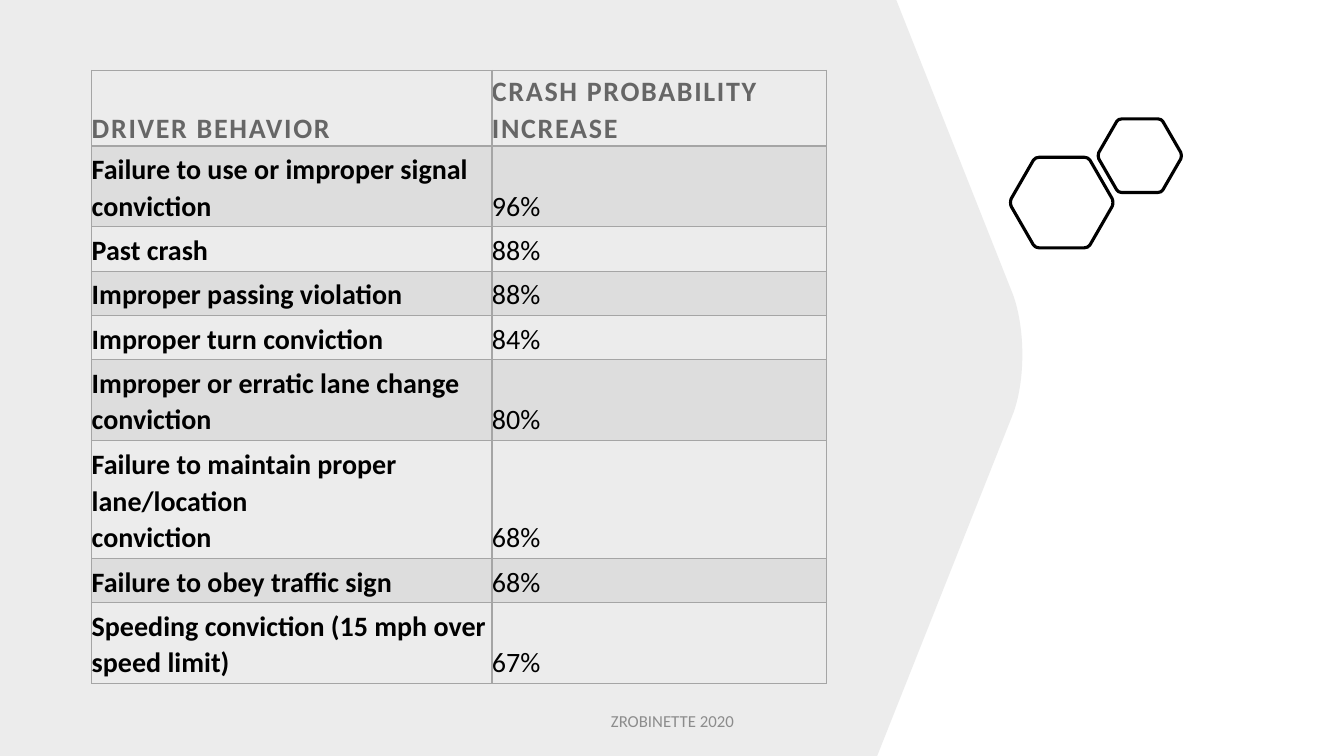
import pptx
import pptx.util
import pptx.dml.color
import pptx.enum.text
import pptx.oxml
import pptx.oxml.ns
import lxml.etree

Inches = pptx.util.Inches
Pt = pptx.util.Pt
RGB = pptx.dml.color.RGBColor
ALIGN = pptx.enum.text.PP_ALIGN
ANCHOR = pptx.enum.text.MSO_ANCHOR
qn = pptx.oxml.ns.qn

GREY = RGB(0x80, 0x80, 0x80)
BAND = RGB(0xA5, 0xA5, 0xA5)
HEAD = RGB(0x66, 0x66, 0x66)
FOOT = RGB(0x8C, 0x8C, 0x8C)
BLACK = RGB(0, 0, 0)
FONT = "Calibri"

COLS = [3.97, 3.32]
ROWS = [
    (0.75, "DRIVER BEHAVIOR", "CRASH PROBABILITY INCREASE"),
    (0.8, "Failure to use or improper signal conviction", "96%"),
    (0.44, "Past crash", "88%"),
    (0.44, "Improper passing violation", "88%"),
    (0.44, "Improper turn conviction", "84%"),
    (0.8, "Improper or erratic lane change conviction", "80%"),
    (1.17, "Failure to maintain proper lane/location\nconviction", "68%"),
    (0.44, "Failure to obey traffic sign", "68%"),
    (0.8, "Speeding conviction (15 mph over speed limit)", "67%"),
]


def write(frame, text, size=20, color=BLACK, bold=False, track=0,
          align=ALIGN.LEFT, lead=None, after=None):
    """Put one formatted paragraph in a text frame."""
    frame.word_wrap = True
    para = frame.paragraphs[0]
    para.text = text
    para.alignment = align
    para.line_spacing = lead
    para.space_after = after
    for run in para.runs:
        font = run.font
        font.name, font.size, font.bold = FONT, Pt(size), bold
        font.color.rgb = color
        if track:
            run._r.get_or_add_rPr().set("spc", str(int(track * 100)))


def tint(fill, color, share):
    """Fill with a colour at a percentage of opacity."""
    fill.solid()
    fill.fore_color.rgb = color
    node = fill._xPr.find(".//" + qn("a:srgbClr"))
    alpha = lxml.etree.SubElement(node, qn("a:alpha"))
    alpha.set("val", str(share * 1000))


def outline(shapes, box, start, steps):
    """Closed freeform in a box; a step is one point or a curve's three."""
    left, top, width, height = box

    def place(point):
        return Inches(left + point[0]), Inches(top + point[1])

    pen = shapes.build_freeform(*place(start), scale=1.0)
    pen.add_line_segments([place(p) for step in steps for p in step])
    shape = pen.convert_to_shape()
    shape.shadow.inherit = False
    # Join each curve's three line segments into one Bezier segment
    route = shape._element.find(".//" + qn("a:path"))
    lines = iter(route.findall(qn("a:lnTo")))
    for step in steps:
        first, *rest = [next(lines) for _ in step]
        if rest:
            first.tag = qn("a:cubicBezTo")
            for line in rest:
                first.append(line[0])
                route.remove(line)
    lxml.etree.SubElement(route, qn("a:close"))
    # Control points may lie outside the box
    shape.width, shape.height = Inches(width), Inches(height)
    route.set("w", str(shape.width))
    route.set("h", str(shape.height))
    return shape


def panel(slide, left, top, width, height):
    """Grey backdrop with a blunt point on its right side."""
    steps = [[(width - 1.25, 0)], [(width - 0.09, 2.93)],
             [(width + 0.03, 3.27), (width + 0.03, 3.77),
              (width - 0.09, 4.1)],
             [(width - 1.44, height)], [(0, height)]]
    shape = outline(slide.shapes, (left, top, width, height), (0, 0), steps)
    tint(shape.fill, GREY, 15)
    shape.line.fill.background()


def hexagon(shapes, left, top, width, height):
    """Outlined hexagon with rounded corners."""
    side = [(0.01, 0.544), (0, 0.522), (0, 0.478), (0.01, 0.456)]
    bend = [(0.225, 0.033), (0.235, 0.012), (0.26, 0), (0.284, 0)]
    flip = [(1 - x, y) for x, y in reversed(bend)]
    half = [side, bend, flip]
    turn = [[(1 - x, 1 - y) for x, y in nodes] for nodes in half]
    nodes = [[(x * width, y * height) for x, y in corner]
             for corner in half + turn]
    steps = [nodes[0][1:]]
    for first, *rest in nodes[1:]:
        steps += [[first], rest]
    shape = outline(shapes, (left, top, width, height), nodes[0][0], steps)
    shape.fill.background()
    shape.line.color.rgb = BLACK
    shape.line.width = Pt(2.25)


def cluster(slide, left, top):
    """Pair of hexagons, the smaller one up and to the right."""
    group = slide.shapes.add_group_shape()
    hexagon(group.shapes, left, top + 0.38, 1.02, 0.9)
    hexagon(group.shapes, left + 0.87, top, 0.83, 0.73)


def border(cell, **widths):
    """Cell borders, with widths in points for sides L, R, T, B."""
    props = cell._tc.get_or_add_tcPr()
    for i, side in enumerate("LRTB"):
        line = pptx.oxml.parse_xml(
            f'<a:ln{side} {pptx.oxml.ns.nsdecls("a")} '
            f'w="{Pt(widths.get(side, 1))}"><a:solidFill>'
            f'<a:srgbClr val="{BAND}"/></a:solidFill></a:ln{side}>')
        props.insert(i, line)


def grid(slide, left, top):
    """Table of driver behaviors and crash probability."""
    high = sum(row[0] for row in ROWS)
    table = slide.shapes.add_table(
        len(ROWS), len(COLS), Inches(left), Inches(top),
        Inches(sum(COLS)), Inches(high)).table
    table.first_row = table.horz_banding = False
    for col, width in zip(table.columns, COLS):
        col.width = Inches(width)
    for r, (tall, *texts) in enumerate(ROWS):
        table.rows[r].height = Inches(tall)
        for c, text in enumerate(texts):
            cell = table.cell(r, c)
            top_row = r == 0
            pad = 0 if top_row else 0.03
            cell.margin_left = 0
            cell.margin_right = Inches(0 if top_row else 0.05)
            cell.margin_top = cell.margin_bottom = Inches(pad)
            cell.vertical_anchor = ANCHOR.BOTTOM
            if r % 2:
                tint(cell.fill, BAND, 20)
            else:
                cell.fill.background()
            border(cell, T=2 if r == 1 else 1, B=2 if top_row else 1)
            write(cell.text_frame, text, bold=top_row or c == 0,
                  color=HEAD if top_row else BLACK,
                  track=1.2 if top_row else 0, lead=1.07, after=Pt(8))


def footer(slide, left, top, width, height):
    """Centred credit line."""
    box = slide.shapes.add_textbox(Inches(left), Inches(top),
                                   Inches(width), Inches(height))
    box.text_frame.vertical_anchor = ANCHOR.MIDDLE
    write(box.text_frame, "ZROBINETTE 2020", size=12, color=FOOT,
          align=ALIGN.CENTER)


def main():
    deck = pptx.Presentation()
    deck.slide_width, deck.slide_height = Inches(13.33), Inches(7.5)
    slide = deck.slides.add_slide(deck.slide_layouts[6])
    panel(slide, 0, 0, 10.14, 7.5)
    cluster(slide, 10.02, 1.18)
    grid(slide, 0.91, 0.7)
    footer(slide, 4.42, 6.95, 4.5, 0.4)
    deck.save("out.pptx")


if __name__ == "__main__":
    main()
